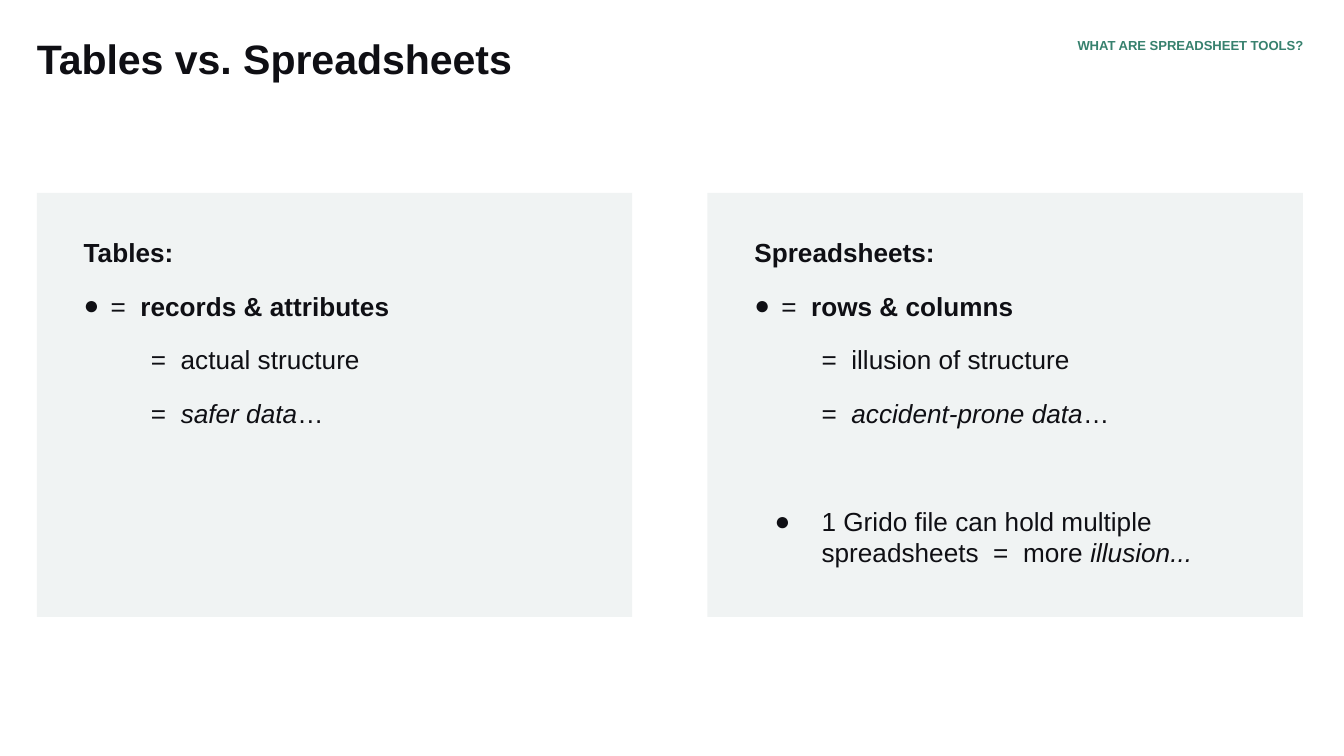
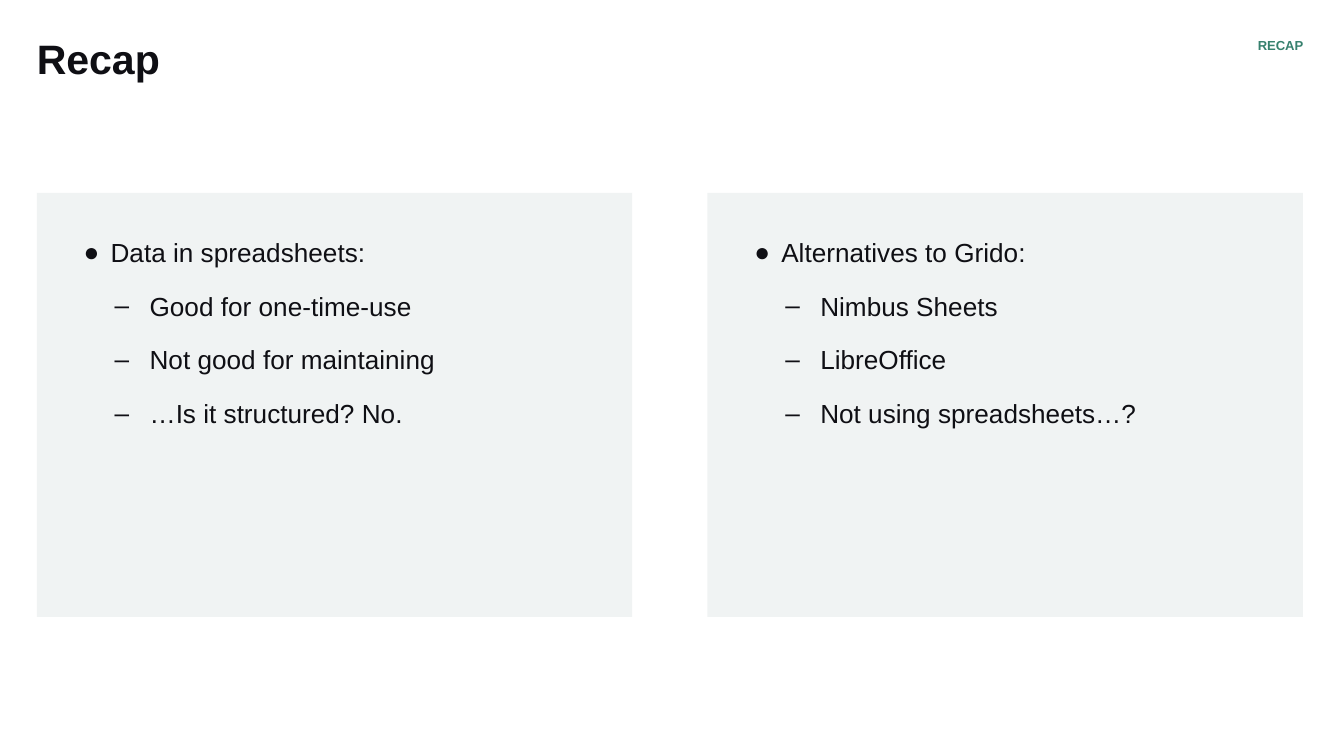
from dataclasses import dataclass
from typing import NamedTuple

import pptx
import pptx.dml.color
import pptx.enum.shapes
import pptx.enum.text
import pptx.oxml
import pptx.oxml.ns
import pptx.util

RGBColor = pptx.dml.color.RGBColor
Align = pptx.enum.text.PP_ALIGN
Inches = pptx.util.Inches
Pt = pptx.util.Pt

WHITE = RGBColor(0xFF, 0xFF, 0xFF)
INK = RGBColor(0x0F, 0x0F, 0x14)
GREEN = RGBColor(0x37, 0x81, 0x6E)
PANEL = RGBColor(0xF0, 0xF3, 0xF3)
FONT = "Arial"
WIDTH = Inches(10)
HEIGHT = WIDTH * 9 // 16
PAD = 0.1
PITCH = 49.9


class Area(NamedTuple):
    left: float
    top: float
    width: float
    height: float

    def shift(self, col: int) -> "Area":
        return self._replace(left=self.left + col * PITCH)


TITLE = Area(2.74, 5.16, 79.9, 10.5)
TAG = Area(75.67, 5.16, 21.3, 2.8)
CARD = Area(2.74, 25.5, 44.3, 56.1)
BODY = Area(6.23, 29.47, 37.2, 45.5)
TALL = BODY._replace(height=49.8)


class Run(NamedTuple):
    text: str
    bold: bool = False
    slant: bool = False


class Style(NamedTuple):
    left: float = 0
    hang: float = 0
    mark: str = ""
    level: int = 0


HEAD = Style()
DOT = Style(0.2, -0.2, "●")
DEEP = Style(0.5)
NOTE = Style(0.5, -0.35, "●")
DASH = Style(0.49, -0.26, "–", 1)


@dataclass
class Line:
    style: Style
    runs: list[Run]
    before: float = 12


@dataclass
class Card:
    lines: list[Line]
    body: Area = BODY


@dataclass
class Page:
    title: str
    tag: str
    cards: list[Card]


def plain(style: Style, text: str) -> Line:
    return Line(style, [Run(text)])


def points(head: str, items: list[str]) -> list[Line]:
    return [plain(DOT, head)] + [plain(DASH, item) for item in items]


def facts(head: str, key: str, trait: str, result: str) -> list[Line]:
    return [
        Line(HEAD, [Run(head, bold=True)]),
        Line(DOT, [Run("=  "), Run(key, bold=True)]),
        plain(DEEP, "=  " + trait),
        Line(DEEP, [Run("=  "), Run(result, slant=True), Run("…")]),
    ]


PAGES = [
    Page("Tables vs. Spreadsheets", "WHAT ARE SPREADSHEET TOOLS?", [
        Card(facts("Tables:", "records & attributes", "actual structure",
                   "safer data")),
        Card(facts("Spreadsheets:", "rows & columns", "illusion of structure",
                   "accident-prone data") + [
            Line(NOTE, [
                Run("1 Grido file can hold multiple spreadsheets  =  more "),
                Run("illusion...", slant=True),
            ], before=41),
        ], TALL),
    ]),
    Page("Recap", "RECAP", [
        Card(points("Data in spreadsheets:", [
            "Good for one-time-use", "Not good for maintaining",
            "…Is it structured? No."])),
        Card(points("Alternatives to Grido:", [
            "Nimbus Sheets", "LibreOffice", "Not using spreadsheets…?"])),
    ]),
]


def place(area: Area) -> tuple[int, int, int, int]:
    return (int(WIDTH * area.left / 100), int(HEIGHT * area.top / 100),
            int(WIDTH * area.width / 100), int(HEIGHT * area.height / 100))


def frame(shape, top: float, right: float):
    text = shape.text_frame
    text.word_wrap = True
    text.auto_size = pptx.enum.text.MSO_AUTO_SIZE.NONE
    text.vertical_anchor = pptx.enum.text.MSO_ANCHOR.TOP
    text.margin_left = 0
    text.margin_top = Inches(top)
    text.margin_right = Inches(right)
    text.margin_bottom = Inches(PAD)
    return text


def write(para, part: Run, size: float, color: RGBColor = INK) -> None:
    run = para.add_run()
    run.text = part.text
    font = run.font
    font.name = FONT
    font.size = Pt(size)
    font.bold = part.bold
    font.italic = part.slant
    font.color.rgb = color


def label(shape, text: str, size: float, color: RGBColor, align, right: float) -> None:
    para = frame(shape, 0, right).paragraphs[0]
    para.alignment = align
    para.line_spacing = 0.9
    write(para, Run(text, bold=True), size, color)


def indent(para, style: Style) -> None:
    para.level = style.level
    props = para._p.get_or_add_pPr()
    props.set("marL", str(Inches(style.left)))
    props.set("indent", str(Inches(style.hang)))
    if style.mark:
        space = pptx.oxml.ns.nsdecls("a")
        for xml in (
            f'<a:buClr {space}><a:srgbClr val="{INK}"/></a:buClr>',
            f'<a:buFont {space} typeface="{FONT}"/>',
            f'<a:buChar {space} char="{style.mark}"/>',
        ):
            props.append(pptx.oxml.parse_xml(xml))


def show(slide, col: int, card: Card) -> None:
    rect = slide.shapes.add_shape(
        pptx.enum.shapes.MSO_SHAPE.RECTANGLE, *place(CARD.shift(col)))
    rect.shadow.inherit = False
    rect.fill.solid()
    rect.fill.fore_color.rgb = PANEL
    rect.line.fill.background()
    box = slide.shapes.add_textbox(*place(card.body.shift(col)))
    text = frame(box, PAD, PAD)
    for i, line in enumerate(card.lines):
        para = text.add_paragraph() if i else text.paragraphs[0]
        indent(para, line.style)
        if i:
            para.space_before = Pt(line.before)
        for part in line.runs:
            write(para, part, 14)


def draw(deck, page: Page) -> None:
    slide = deck.slides.add_slide(deck.slide_layouts[5])
    slide.background.fill.solid()
    slide.background.fill.fore_color.rgb = WHITE
    title = slide.shapes.title
    title.left, title.top, title.width, title.height = place(TITLE)
    label(title, page.title, 22, INK, Align.LEFT, PAD)
    for col, card in reversed(list(enumerate(page.cards))):
        show(slide, col, card)
    label(slide.shapes.add_textbox(*place(TAG)), page.tag, 7, GREEN, Align.RIGHT, 0)


def main() -> None:
    deck = pptx.Presentation()
    deck.slide_width = WIDTH
    deck.slide_height = HEIGHT
    for page in PAGES:
        draw(deck, page)
    deck.save("out.pptx")


if __name__ == "__main__":
    main()
